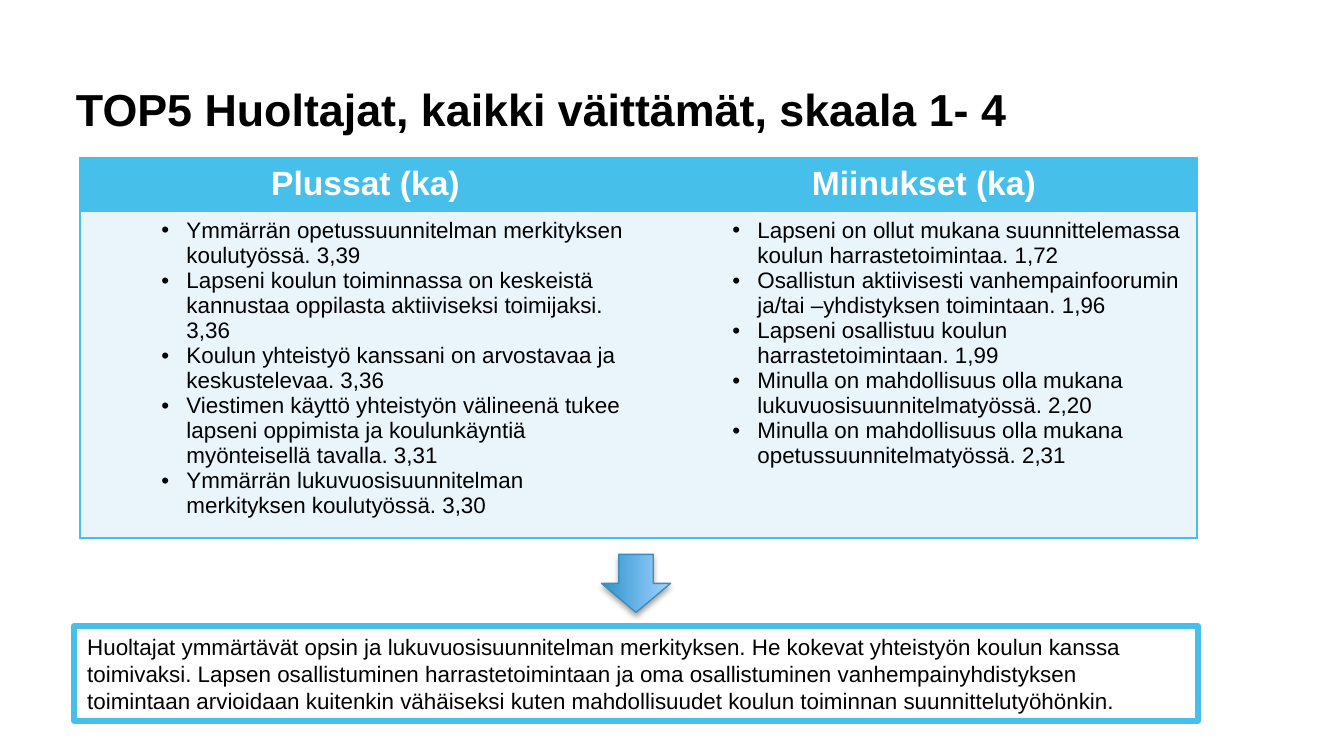
from pptx import Presentation
from pptx.dml.color import RGBColor
from pptx.enum.shapes import MSO_SHAPE
from pptx.enum.text import MSO_ANCHOR, MSO_AUTO_SIZE, PP_ALIGN
from pptx.oxml import parse_xml
from pptx.oxml.ns import nsdecls
from pptx.util import Pt

# Content
TITLE = "TOP5 Huoltajat, kaikki väittämät, skaala 1- 4"
COLS = [
    ("Plussat (ka)", 571, [
        "Ymmärrän opetussuunnitelman merkityksen koulutyössä. 3,39",
        "Lapseni koulun toiminnassa on keskeistä kannustaa oppilasta aktiiviseksi toimijaksi. 3,36",
        "Koulun yhteistyö kanssani on arvostavaa ja keskustelevaa. 3,36",
        "Viestimen käyttö yhteistyön välineenä tukee lapseni oppimista ja koulunkäyntiä "
        "myönteisellä tavalla. 3,31",
        "Ymmärrän lukuvuosisuunnitelman merkityksen koulutyössä. 3,30",
    ]),
    ("Miinukset (ka)", 546, [
        "Lapseni on ollut mukana suunnittelemassa koulun harrastetoimintaa. 1,72",
        "Osallistun aktiivisesti vanhempainfoorumin ja/tai –yhdistyksen toimintaan. 1,96",
        "Lapseni osallistuu koulun harrastetoimintaan. 1,99",
        "Minulla on mahdollisuus olla mukana lukuvuosisuunnitelmatyössä. 2,20",
        "Minulla on mahdollisuus olla mukana opetussuunnitelmatyössä. 2,31",
    ]),
]
SUMMARY = (
    "Huoltajat ymmärtävät opsin ja lukuvuosisuunnitelman merkityksen. He kokevat yhteistyön "
    "koulun kanssa toimivaksi. Lapsen osallistuminen harrastetoimintaan ja oma osallistuminen "
    "vanhempainyhdistyksen toimintaan arvioidaan kuitenkin vähäiseksi kuten mahdollisuudet "
    "koulun toiminnan suunnittelutyöhönkin."
)

# Look
BLACK = RGBColor(0x00, 0x00, 0x00)
WHITE = RGBColor(0xFF, 0xFF, 0xFF)
CYAN = RGBColor(0x46, 0xBF, 0xEA)
PALE = RGBColor(0xE9, 0xF4, 0xFB)
DEEP = RGBColor(0x2E, 0x94, 0xCD)
LIGHT = RGBColor(0xA1, 0xD2, 0xFF)
EDGE = RGBColor(0x3C, 0x8D, 0xBA)
HEAD = {"size": Pt(18), "bold": True}
TEXT = {"size": Pt(12), "bold": False}
ROWS = [53, 327]
NO_STYLE = "{2D5ABB26-0587-4C30-8999-92F81FD0307C}"


def px(num):
    return round(num * 914400 / 134.4)


def apply(obj, vals):
    for key, val in vals.items():
        setattr(obj, key, val)


def write(para, text, color, font):
    run = para.add_run()
    run.text = text
    apply(run.font, {"name": "Arial", **font})
    run.font.color.rgb = color


def bullet(para):
    props = para._p.get_or_add_pPr()
    props.set("marL", str(px(93)))
    props.set("indent", str(-px(25)))
    for tag in ('<a:buFont %s typeface="Arial"/>', '<a:buChar %s char="•"/>'):
        props.append(parse_xml(tag % nsdecls("a")))


def border(cell, sides):
    props = cell._tc.get_or_add_tcPr()
    for side in sides:
        props.append(parse_xml(
            f'<a:ln{side} {nsdecls("a")} w="12700"><a:solidFill>'
            f'<a:srgbClr val="{CYAN}"/></a:solidFill></a:ln{side}>'))


prs = Presentation()
apply(prs, {"slide_width": px(1344), "slide_height": px(756)})
slide = prs.slides.add_slide(prs.slide_layouts[5])
shapes = slide.shapes

# Title
title = shapes.title
apply(title, {"left": px(76), "top": px(26), "width": px(1112), "height": px(110)})
apply(title.text_frame, {
    "margin_left": 0, "margin_top": 0, "margin_bottom": 0, "margin_right": px(13),
    "vertical_anchor": MSO_ANCHOR.BOTTOM, "word_wrap": True,
    "auto_size": MSO_AUTO_SIZE.NONE})
para = title.text_frame.paragraphs[0]
apply(para, {"alignment": PP_ALIGN.LEFT, "line_spacing": Pt(33)})
write(para, TITLE, BLACK, {"size": Pt(24), "bold": True})

# Table of pluses and minuses
wide = sum(col[1] for col in COLS)
frame = shapes.add_table(2, len(COLS), px(80), px(158), px(wide), px(sum(ROWS)))
table = frame.table
apply(table, {"first_row": False, "horz_banding": False})
table._tbl.tblPr.find("{*}tableStyleId").text = NO_STYLE
for row, high in zip(table.rows, ROWS):
    row.height = px(high)
for num, (name, width, items) in enumerate(COLS):
    table.columns[num].width = px(width)
    top, body = table.cell(0, num), table.cell(1, num)
    for cell, fill in ((top, CYAN), (body, PALE)):
        border(cell, ("R" if num else "L") + "TB")
        cell.fill.solid()
        cell.fill.fore_color.rgb = fill
    para = top.text_frame.paragraphs[0]
    para.alignment = PP_ALIGN.CENTER
    write(para, name, WHITE, HEAD)
    for pos, item in enumerate(items):
        text = body.text_frame
        para = text.add_paragraph() if pos else text.paragraphs[0]
        bullet(para)
        write(para, item, BLACK, TEXT)

# Summary box
box = shapes.add_shape(MSO_SHAPE.RECTANGLE, px(74), px(626), px(1124), px(95))
box.shadow.inherit = False
box.fill.solid()
box.fill.fore_color.rgb = WHITE
box.line.color.rgb = CYAN
box.line.width = Pt(3)
apply(box.text_frame, {
    "word_wrap": True, "vertical_anchor": MSO_ANCHOR.TOP,
    "auto_size": MSO_AUTO_SIZE.SHAPE_TO_FIT_TEXT})
para = box.text_frame.paragraphs[0]
apply(para, {"alignment": PP_ALIGN.LEFT, "line_spacing": Pt(14.5)})
write(para, SUMMARY, BLACK, TEXT)

# Arrow from table to summary
arrow = shapes.add_shape(MSO_SHAPE.RIGHT_ARROW, px(607), px(549), px(58), px(69))
arrow.rotation = 90
arrow.fill.gradient()
arrow.fill.gradient_angle = 90
for stop, color in zip(arrow.fill.gradient_stops, (DEEP, LIGHT)):
    stop.color.rgb = color
arrow.line.color.rgb = EDGE
arrow.line.width = Pt(0.75)
arrow._element.spPr.append(parse_xml(
    f'<a:effectLst {nsdecls("a")}><a:outerShdw blurRad="{Pt(3.1)}" dist="{Pt(1.8)}" '
    'dir="5400000" rotWithShape="0"><a:srgbClr val="000000"><a:alpha val="35000"/>'
    '</a:srgbClr></a:outerShdw></a:effectLst>'))

prs.save("out.pptx")
